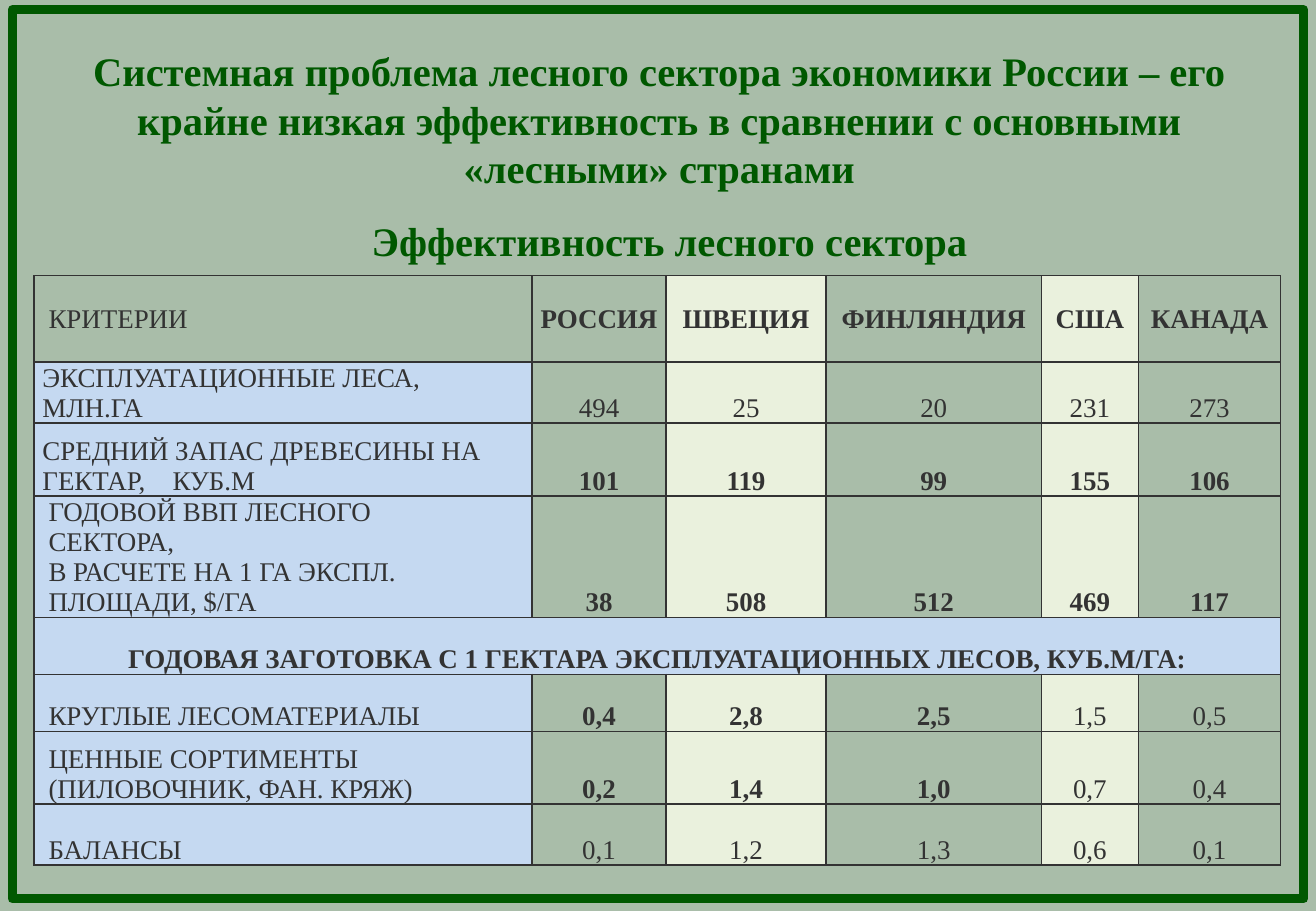
"""Builds a slide comparing forest sector efficiency across five countries."""
from lxml import etree
from pptx import Presentation
from pptx.dml.color import RGBColor
from pptx.enum.shapes import MSO_SHAPE
from pptx.enum.text import MSO_ANCHOR, PP_ALIGN
from pptx.oxml.ns import qn
from pptx.util import Inches, Pt

RECTANGLE = MSO_SHAPE.RECTANGLE
LEFT, CENTER = PP_ALIGN.LEFT, PP_ALIGN.CENTER
MIDDLE, BOTTOM = MSO_ANCHOR.MIDDLE, MSO_ANCHOR.BOTTOM
FONT = "Times New Roman"
GREEN, INK, SAGE, CREAM, BLUE = "005800", "333333", "A9BDA9", "EAF1DD", "C5D9F1"
NARROW, WIDE = 0.07, 0.12


def color(value):
    return RGBColor.from_string(value)


def write(frame, text, size=16, ink=INK, bold=False, align=CENTER, tab=None):
    frame.word_wrap = True
    frame.text = text
    for paragraph in frame.paragraphs:
        if tab and "\t" in paragraph.text:
            tabs = etree.SubElement(paragraph._p.get_or_add_pPr(), qn("a:tabLst"))
            etree.SubElement(tabs, qn("a:tab"), pos=str(Inches(tab)), algn="l")
        paragraph.alignment = align
        for run in paragraph.runs:
            run.font.name, run.font.size, run.font.bold = FONT, Pt(size), bold
            run.font.color.rgb = color(ink)


deck = Presentation()
deck.slide_width, deck.slide_height = Inches(10.83), Inches(7.5)
slide = deck.slides.add_slide(deck.slide_layouts[6])
slide.background.fill.solid()
slide.background.fill.fore_color.rgb = color(SAGE)

border = slide.shapes.add_shape(
    RECTANGLE, Inches(0.1), Inches(0.08), Inches(10.63), Inches(7.32))
border.shadow.inherit = False
border.fill.background()
border.line.color.rgb = color(GREEN)
border.line.width = Pt(5.25)
etree.SubElement(border.line._get_or_add_ln(), qn("a:round"))

column_widths = [4.1, 1.1, 1.32, 1.77, 0.8, 1.17]
row_heights = [0.71, 0.5, 0.6, 0.84, 0.47, 0.47, 0.6, 0.5]
# label, left indent, values, number of leading values in bold
criteria = [
    ("КРИТЕРИИ", WIDE, "РОССИЯ ШВЕЦИЯ ФИНЛЯНДИЯ США КАНАДА", 5),
    ("ЭКСПЛУАТАЦИОННЫЕ ЛЕСА,\nМЛН.ГА", NARROW, "494 25 20 231 273", 0),
    ("СРЕДНИЙ ЗАПАС ДРЕВЕСИНЫ НА\nГЕКТАР,\tКУБ.М", NARROW, "101 119 99 155 106", 5),
    ("ГОДОВОЙ ВВП ЛЕСНОГО\nСЕКТОРА,\nВ РАСЧЕТЕ НА 1 ГА ЭКСПЛ.\nПЛОЩАДИ, $/ГА",
     WIDE, "38 508 512 469 117", 5),
    ("ГОДОВАЯ ЗАГОТОВКА С 1 ГЕКТАРА ЭКСПЛУАТАЦИОННЫХ ЛЕСОВ, КУБ.М/ГА:", 0.01, "", 0),
    ("КРУГЛЫЕ ЛЕСОМАТЕРИАЛЫ", WIDE, "0,4 2,8 2,5 1,5 0,5", 3),
    ("ЦЕННЫЕ СОРТИМЕНТЫ\n(ПИЛОВОЧНИК, ФАН. КРЯЖ)", WIDE, "0,2 1,4 1,0 0,7 0,4", 3),
    ("БАЛАНСЫ", WIDE, "0,1 1,2 1,3 0,6 0,1", 0),
]
efficiency = slide.shapes.add_table(
    len(row_heights), len(column_widths), Inches(0.28), Inches(2.27),
    Inches(sum(column_widths)), Inches(sum(row_heights))).table
efficiency.horz_banding = efficiency.first_row = False
for column, width in zip(efficiency.columns, column_widths):
    column.width = Inches(width)
for row, height in zip(efficiency.rows, row_heights):
    row.height = Inches(height)

for r, (label, indent, values, bold_count) in enumerate(criteria):
    is_section = not values
    if is_section:
        efficiency.cell(r, 0).merge(efficiency.cell(r, len(column_widths) - 1))
    for c in range(len(column_widths)):
        cell = efficiency.cell(r, c)
        cell.margin_left = Inches(0.01 if c else indent)
        cell.margin_top = cell.margin_right = Inches(0.01)
        cell.margin_bottom = 0
        cell.vertical_anchor = BOTTOM if r else MIDDLE
        if c == 0:
            write(cell.text_frame, label, bold=is_section,
                  align=CENTER if is_section else LEFT, tab=1.07)
        elif values:
            write(cell.text_frame, values.split()[c - 1], bold=c <= bold_count)
        properties = cell._tc.get_or_add_tcPr()
        for side in ("a:lnL", "a:lnR", "a:lnT", "a:lnB"):
            edge = etree.SubElement(properties, qn(side), w=str(Pt(1)))
            ink = etree.SubElement(edge, qn("a:solidFill"))
            etree.SubElement(ink, qn("a:srgbClr"), val=INK)
        if is_section or (c == 0 and r):
            shade = BLUE
        else:
            shade = CREAM if c in (2, 4) else SAGE
        cell.fill.solid()
        cell.fill.fore_color.rgb = color(shade)

headings = [
    ("Эффективность лесного сектора", 0.5, 1.73, 10.02, 0.5),
    ("Системная проблема лесного сектора экономики России – его крайне низкая "
     "эффективность в сравнении с основными «лесными» странами", 0.3, 0.33, 10.25, 1.31),
]
for text, *place in headings:
    heading = slide.shapes.add_textbox(*map(Inches, place))
    write(heading.text_frame, text, size=24, ink=GREEN, bold=True)

deck.save("out.pptx")
